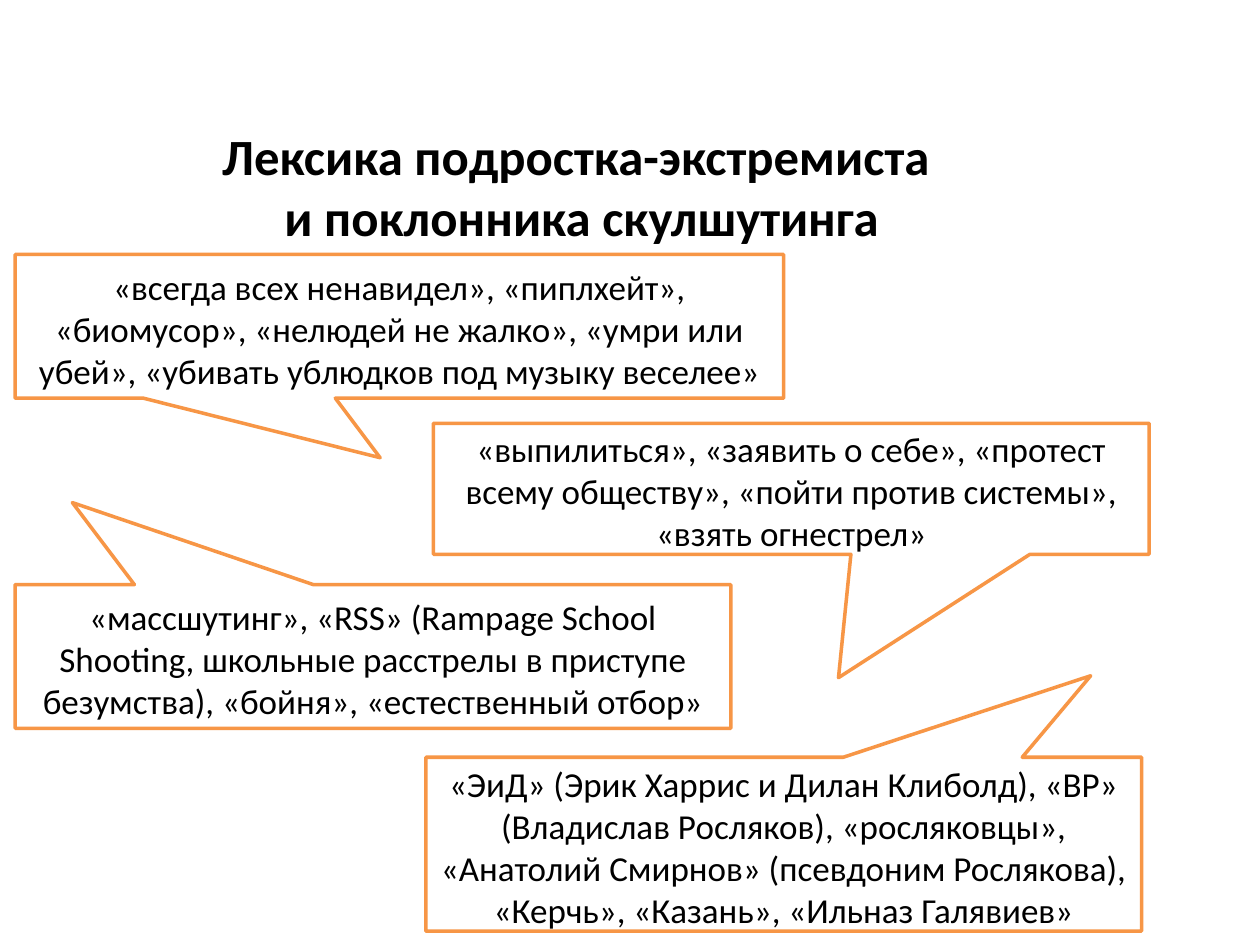
from pptx import Presentation
from pptx.dml.color import RGBColor
from pptx.enum.shapes import MSO_SHAPE
from pptx.enum.text import MSO_ANCHOR, PP_ALIGN
from pptx.util import Inches, Pt

BLACK = RGBColor(0x00, 0x00, 0x00)
WHITE = RGBColor(0xFF, 0xFF, 0xFF)
ORANGE = RGBColor(0xF7, 0x96, 0x46)
FONT = "Calibri"

TITLE_LINES = ["Лексика подростка-экстремиста ", "и поклонника скулшутинга"]

# Box (left, top, width, height), tail tip offset from the centre, wording
CALLOUTS = [
    ((0.12, 2.02, 6.1, 1.14), (-0.025, 0.915),
     "«всегда всех ненавидел», «пиплхейт», «биомусор», «нелюдей не жалко», "
     "«умри или убей», «убивать ублюдков под музыку веселее»"),
    ((3.44, 3.36, 5.68, 1.04), (0.066, 1.441),
     "«выпилиться», «заявить о себе», «протест всему обществу», "
     "«пойти против системы», «взять огнестрел»"),
    ((0.12, 4.64, 5.68, 1.14), (-0.42, -1.071),
     "«массшутинг», «RSS» (Rampage School Shooting, школьные расстрелы "
     "в приступе безумства), «бойня», «естественный отбор»"),
    ((3.38, 6.01, 5.68, 1.38), (0.429, -0.969),
     "«ЭиД» (Эрик Харрис и Дилан Клиболд), «ВР» (Владислав Росляков), "
     "«росляковцы», «Анатолий Смирнов» (псевдоним Рослякова), «Керчь», "
     "«Казань», «Ильназ Галявиев»"),
]


def write_centred(frame, lines, size, bold=False):
    frame.word_wrap = True
    frame.margin_top = Inches(0.08)
    frame.text = "\n".join(lines)
    for paragraph in frame.paragraphs:
        paragraph.alignment = PP_ALIGN.CENTER
        for run in paragraph.runs:
            run.font.name = FONT
            run.font.size = Pt(size)
            run.font.bold = bold
            run.font.color.rgb = BLACK


def add_title(slide, box):
    title = slide.shapes.add_textbox(*map(Inches, box))
    write_centred(title.text_frame, TITLE_LINES, 29, bold=True)


def add_callout(slide, box, tail, wording):
    callout = slide.shapes.add_shape(MSO_SHAPE.RECTANGULAR_CALLOUT, *map(Inches, box))
    callout.adjustments[0], callout.adjustments[1] = tail
    callout.shadow.inherit = False
    callout.fill.solid()
    callout.fill.fore_color.rgb = WHITE
    callout.line.color.rgb = ORANGE
    callout.line.width = Pt(2)
    callout.text_frame.vertical_anchor = MSO_ANCHOR.MIDDLE
    write_centred(callout.text_frame, [wording], 20)


def main():
    presentation = Presentation()
    presentation.slide_width = Inches(10)
    presentation.slide_height = Inches(7.5)
    slide = presentation.slides.add_slide(presentation.slide_layouts[6])
    add_title(slide, (0.12, 0.91, 9, 1.1))
    for box, tail, wording in CALLOUTS:
        add_callout(slide, box, tail, wording)
    presentation.save("out.pptx")


if __name__ == "__main__":
    main()
